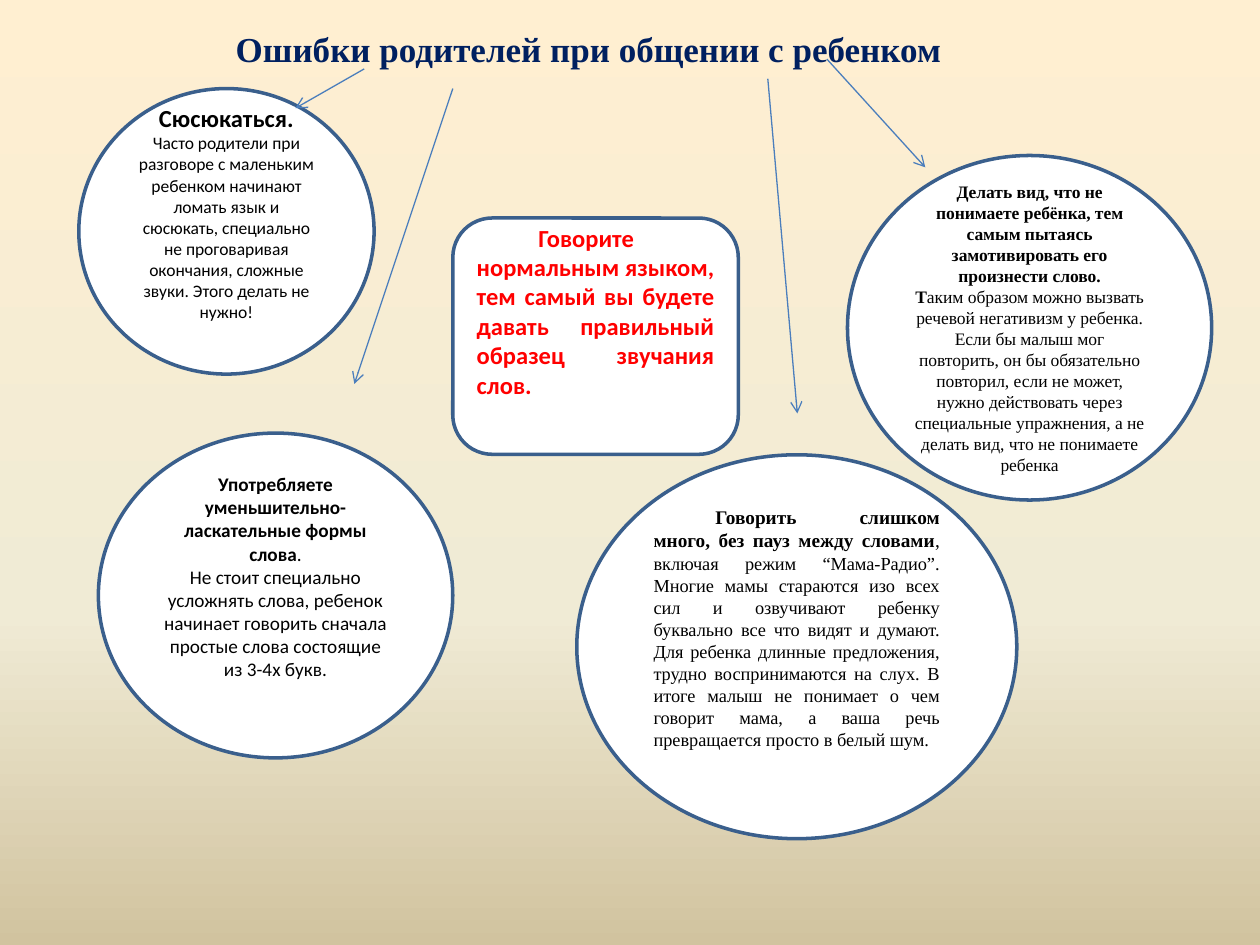
from copy import deepcopy
from pptx import Presentation
from pptx.dml.color import RGBColor
from pptx.enum.shapes import MSO_CONNECTOR as Connector, MSO_SHAPE as Shape
from pptx.enum.text import MSO_ANCHOR as Anchor, PP_ALIGN as Align
from pptx.oxml.ns import qn
from pptx.util import Inches, Pt
from lxml.etree import SubElement

CELL = Inches(10) / 128
SERIF, SANS = "Times New Roman", "Calibri"
BLACK, RED, NAVY = "000000", "FF0000", "002060"

BUBBLES = [
    (Shape.OVAL, (8, 9, 30, 29), SANS, BLACK, Align.CENTER, 0.3, [
        [("Сюсюкаться.", 14, True)],
        [("Часто родители при разговоре с маленьким ребенком начинают ломать язык и "
          "сюсюкать, специально не проговаривая окончания, сложные звуки. "
          "Этого делать не нужно!", 10, False)]]),
    (Shape.OVAL, (58.6, 46.2, 44.7, 39), SERIF, BLACK, Align.JUSTIFY, 0.3, [
        [("Говорить слишком много, без пауз между словами", 11, True), (", ", 11, False),
         ("включая режим “Мама-Радио”. Многие мамы стараются изо всех сил и озвучивают "
          "ребенку буквально все что видят и думают. Для ребенка длинные предложения, "
          "трудно воспринимаются на слух. В итоге малыш не понимает о чем говорит мама, "
          "а ваша речь превращается просто в белый шум.", 10.5, False)]]),
    (Shape.OVAL, (86.1, 15.8, 37, 35), SERIF, BLACK, Align.CENTER, 0, [
        [("Делать вид, что не понимаете ребёнка, тем самым пытаясь замотивировать "
          "его произнести слово.", 10, True)],
        [("Т", 10, True),
         ("аким образом можно вызвать речевой негативизм у ребенка. Если бы малыш мог "
          "повторить, он бы обязательно повторил, если не может, нужно действовать через "
          "специальные упражнения, а не делать вид, что не понимаете ребенка", 10, False)]]),
    (Shape.OVAL, (10, 44, 36, 33), SANS, BLACK, Align.CENTER, 0.3, [
        [("Употребляете уменьшительно-ласкательные формы слова", 11, True), (".", 11, False)],
        [("Не стоит специально усложнять слова, ребенок начинает говорить сначала "
          "простые слова состоящие из 3-4х букв.", 11, False)]]),
    (Shape.ROUNDED_RECTANGLE, (46, 22.15, 29, 24), SANS, RED, Align.JUSTIFY, 0.4, [
        [("Говорите нормальным языком, тем самый вы будете давать правильный образец "
          "звучания слов.", 14, True)]]),
]
ARROWS = [(37, 7, 30, 11), (46, 9, 36, 39), (78, 8, 81, 42), (84, 6, 94, 17)]


def color(value):
    return RGBColor.from_string(value)


def grid(*cells):
    return [round(cell * CELL) for cell in cells]


def paint_background(page):
    fill = page.background.fill
    fill.gradient()
    fill.gradient_angle = 270
    stops = page.element.find(".//" + qn("a:gsLst"))
    stops.insert(1, deepcopy(stops[0]))
    shades = [(0, "FFEFD1"), (0.65, "F0EBD5"), (1, "D1C39F")]
    for stop, (position, shade) in zip(fill.gradient_stops, shades):
        stop.position = position
        stop.color.rgb = color(shade)


def write(frame, paragraphs, face, ink, align):
    frame.word_wrap = True
    for index, pieces in enumerate(paragraphs):
        para = frame.add_paragraph() if index else frame.paragraphs[0]
        para.alignment = align
        if align == Align.JUSTIFY:
            para._p.get_or_add_pPr().set("indent", str(Inches(0.49)))
        for text, size, bold in pieces:
            span = para.add_run()
            span.text = text
            span.font.name, span.font.size, span.font.bold = face, Pt(size), bold
            span.font.color.rgb = color(ink)


def add_title(page, text):
    box = page.shapes.add_textbox(*grid(15, 2.2, 89.6, 4))
    write(box.text_frame, [[(text, 20, True)]], SERIF, NAVY, Align.CENTER)


def add_bubble(page, kind, cells, face, ink, align, lift, paragraphs):
    bubble = page.shapes.add_shape(kind, *grid(*cells))
    bubble.shadow.inherit = False
    bubble.fill.solid()
    bubble.fill.fore_color.rgb = color("FFFFFF")
    bubble.line.color.rgb = color("3A5F8C")
    bubble.line.width = Pt(2)
    frame = bubble.text_frame
    frame.vertical_anchor = Anchor.MIDDLE
    frame.margin_bottom = Inches(0.05 + lift)
    write(frame, paragraphs, face, ink, align)


def add_arrow(page, cells):
    arrow = page.shapes.add_connector(Connector.STRAIGHT, *grid(*cells))
    arrow.line.color.rgb = color("4B7EBC")
    arrow.line.width = Pt(0.75)
    SubElement(arrow.line._get_or_add_ln(), qn("a:tailEnd"), type="arrow")
    SubElement(arrow._element.spPr, qn("a:effectLst"))


def main():
    deck = Presentation()
    deck.slide_width, deck.slide_height = grid(128, 96)
    page = deck.slides.add_slide(deck.slide_layouts[6])
    paint_background(page)
    add_title(page, "Ошибки родителей при общении с ребенком")
    *ovals, advice = BUBBLES
    for oval in ovals:
        add_bubble(page, *oval)
    for cells in ARROWS:
        add_arrow(page, cells)
    add_bubble(page, *advice)
    deck.save("out.pptx")


if __name__ == "__main__":
    main()
